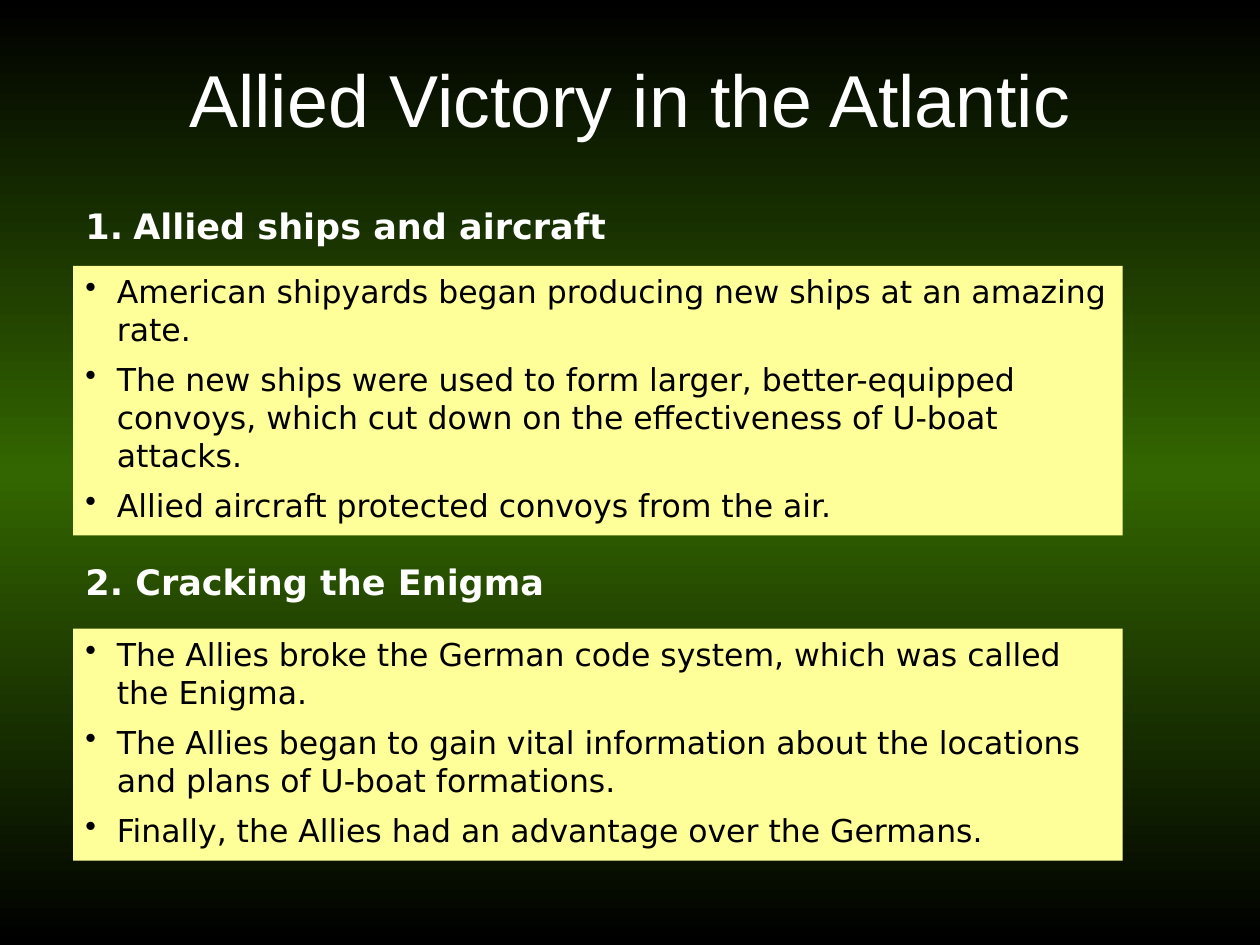
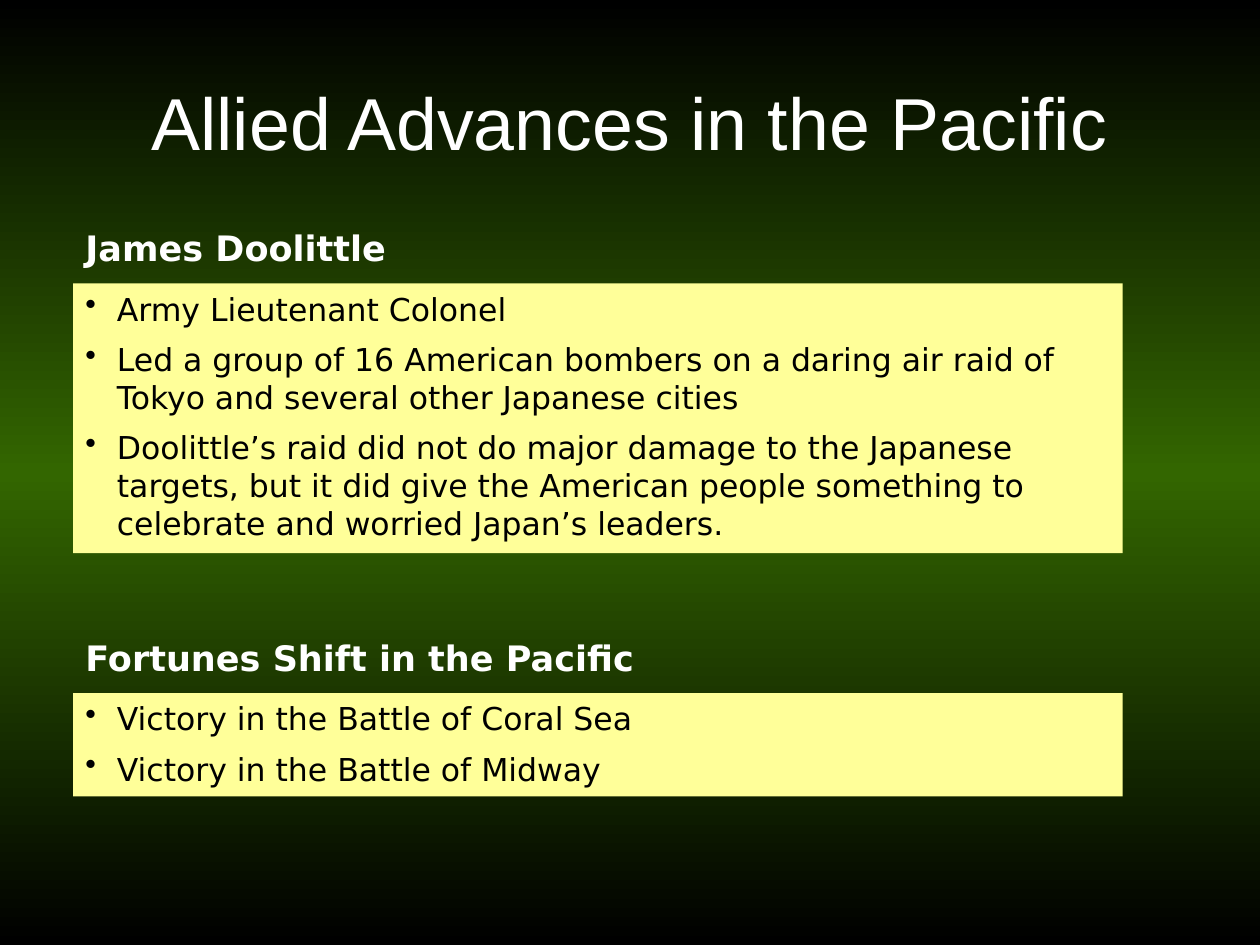
from copy import deepcopy

from pptx import Presentation
from pptx.dml.color import RGBColor
from pptx.enum.shapes import MSO_SHAPE
from pptx.enum.text import MSO_ANCHOR, PP_ALIGN
from pptx.oxml.ns import qn
from pptx.util import Inches, Pt

BLACK = RGBColor(0x00, 0x00, 0x00)
GREEN = RGBColor(0x33, 0x66, 0x00)
WHITE = RGBColor(0xFF, 0xFF, 0xFF)
YELLOW = RGBColor(0xFF, 0xFF, 0x99)
CENTER, LEFT = PP_ALIGN.CENTER, PP_ALIGN.LEFT
MIDDLE, TOP = MSO_ANCHOR.MIDDLE, MSO_ANCHOR.TOP
RECTANGLE = MSO_SHAPE.RECTANGLE

TITLE_FONT, TEXT_FONT = "Arial", "DejaVu Sans"
BLANK_LAYOUT = 6

# Shared column of headings and panels, in inches
COLUMN_LEFT, COLUMN_WIDTH = 0.58, 8.33
HEADING_HEIGHT = 0.43
NUMBER_INDENT, BULLET_INDENT = 0.38, 0.25
BULLET_GAP = 0.4 * 18

# Title, its place, and sections: heading, its number, heading top,
# panel top, panel height, bullets
PAGES = [
    ("Allied Victory in the Atlantic", (0.5, 0.3, 9, 0.95), [
        ("Allied ships and aircraft", True, 1.57, 2.11, 2.14, [
            "American shipyards began producing new ships at an amazing rate.",
            "The new ships were used to form larger, better-equipped convoys, "
            "which cut down on the effectiveness of U-boat attacks.",
            "Allied aircraft protected convoys from the air.",
        ]),
        ("2. Cracking the Enigma", False, 4.4, 4.99, 1.84, [
            "The Allies broke the German code system, which was called the Enigma.",
            "The Allies began to gain vital information about the locations "
            "and plans of U-boat formations.",
            "Finally, the Allies had an advantage over the Germans.",
        ]),
    ]),
    ("Allied Advances in the Pacific", (0.58, 0.42, 8.83, 1.08), [
        ("James Doolittle", False, 1.75, 2.25, 2.14, [
            "Army Lieutenant Colonel",
            "Led a group of 16 American bombers on a daring air raid of Tokyo "
            "and several other Japanese cities",
            "Doolittle’s raid did not do major damage to the Japanese targets, "
            "but it did give the American people something to celebrate and "
            "worried Japan’s leaders.",
        ]),
        ("Fortunes Shift in the Pacific", False, 5, 5.5, 0.82, [
            "Victory in the Battle of Coral Sea",
            "Victory in the Battle of Midway",
        ]),
    ]),
]


def write(box, lines, font, size, color, bold=False, align=LEFT, anchor=TOP):
    """Fill a box with one paragraph per line."""
    frame = box.text_frame
    frame.word_wrap = True
    frame.vertical_anchor = anchor
    frame.text = "\n".join(lines)
    for para in frame.paragraphs:
        para.alignment = align
        para.font.name = font
        para.font.size = Pt(size)
        para.font.bold = bold
        para.font.color.rgb = color
    return frame.paragraphs


def add_marker(para, indent, tag, **attributes):
    """Give a paragraph a hanging bullet or number."""
    properties = para._p.get_or_add_pPr()
    properties.set("marL", str(Inches(indent)))
    properties.set("indent", str(-Inches(indent)))
    marker = properties.makeelement(qn(tag), attributes)
    properties.append(marker)


deck = Presentation()
deck.slide_width, deck.slide_height = Inches(10), Inches(7.5)

for title, title_place, sections in PAGES:
    page = deck.slides.add_slide(deck.slide_layouts[BLANK_LAYOUT])

    # Background: black, green, black from top to bottom
    fill = page.background.fill
    fill.gradient()
    fill.gradient_angle = 270
    stop_list = page.element.find(".//" + qn("a:gsLst"))
    stop_list.append(deepcopy(stop_list[0]))
    for stop, position, color in zip(fill.gradient_stops, (0, 0.5, 1), (BLACK, GREEN, BLACK)):
        stop.position = position
        stop.color.rgb = color

    # Headings, each with its panel of bullets
    for heading, numbered, heading_top, panel_top, panel_height, bullets in sections:
        heading_box = page.shapes.add_textbox(
            Inches(COLUMN_LEFT), Inches(heading_top),
            Inches(COLUMN_WIDTH), Inches(HEADING_HEIGHT))
        paras = write(heading_box, [heading], TEXT_FONT, 20, WHITE, bold=True)
        if numbered:
            add_marker(paras[0], NUMBER_INDENT, "a:buAutoNum", type="arabicPeriod")

        panel = page.shapes.add_shape(
            RECTANGLE, Inches(COLUMN_LEFT), Inches(panel_top),
            Inches(COLUMN_WIDTH), Inches(panel_height))
        panel.shadow.inherit = False
        panel.fill.solid()
        panel.fill.fore_color.rgb = YELLOW
        panel.line.fill.background()
        for index, para in enumerate(write(panel, bullets, TEXT_FONT, 18, BLACK)):
            para.space_before = Pt(BULLET_GAP if index else 0)
            add_marker(para, BULLET_INDENT, "a:buChar", char="•")

    # Title
    title_box = page.shapes.add_textbox(*map(Inches, title_place))
    write(title_box, [title], TITLE_FONT, 42, WHITE, align=CENTER, anchor=MIDDLE)

deck.save("out.pptx")
